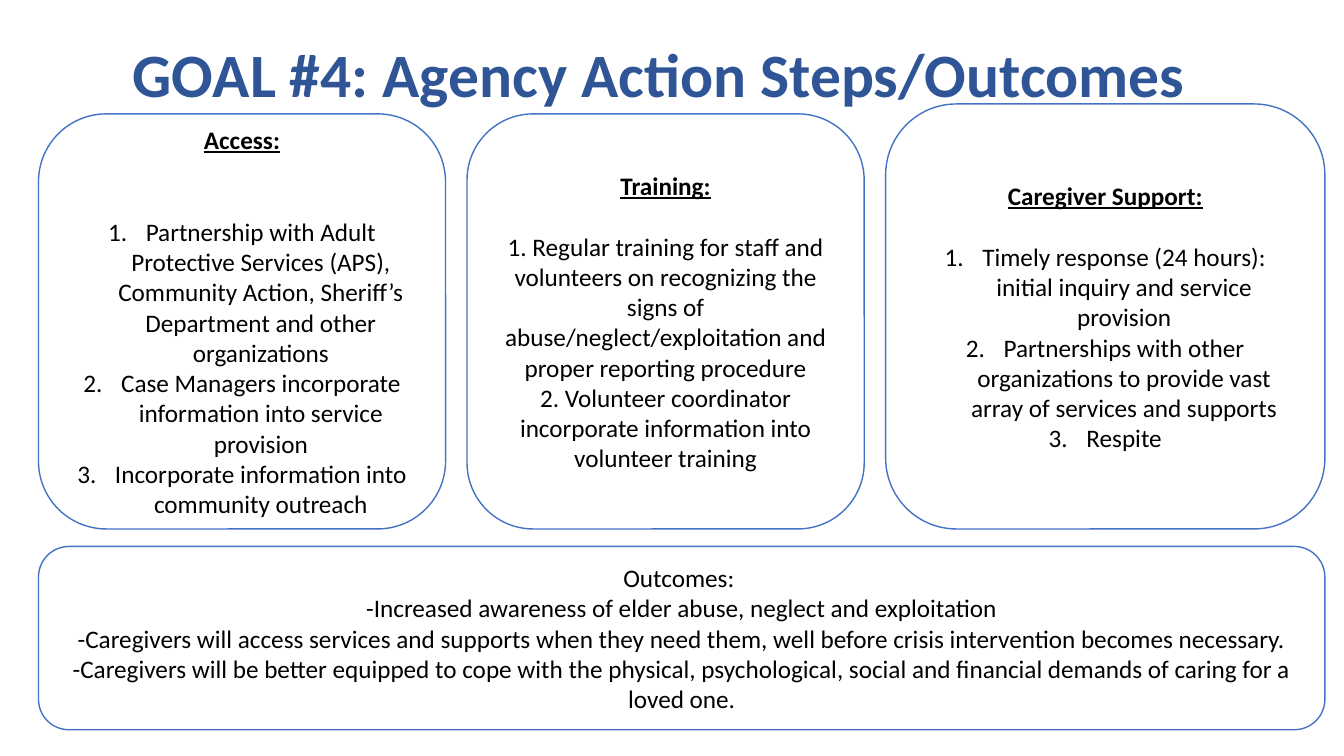
from pptx import Presentation
from pptx.dml.color import RGBColor
from pptx.enum import shapes, text
from pptx.oxml import parse_xml
from pptx.oxml.ns import nsdecls
from pptx.util import Cm, Pt

FONT = "Calibri"
LEFT, GAP = 0.97, 0.54
BASE = 13.33  # lower edge of the three columns
LINE = 22  # height of one text line in points

# heading, gap in lines, top, width, automatic numbers, steps
COLUMNS = [
    ("Access:", 2, 2.87, 10.26, True, [
        "Partnership with Adult Protective Services (APS), Community Action, "
        "Sheriff’s Department and other organizations",
        "Case Managers incorporate information into service provision",
        "Incorporate information into community outreach",
    ]),
    ("Training:", 1, 2.87, 10.01, False, [
        "1. Regular training for staff and volunteers on recognizing the signs of "
        "abuse/neglect/exploitation and proper reporting procedure",
        "2. Volunteer coordinator incorporate information into volunteer training",
    ]),
    ("Caregiver Support:", 1, 2.62, 11.07, True, [
        "Timely response (24 hours): initial inquiry and service provision",
        "Partnerships with other organizations to provide vast array of services "
        "and supports",
        "Respite",
    ]),
]
OUTCOMES = [
    "Outcomes: ",
    "-Increased awareness of elder abuse, neglect and exploitation",
    "-Caregivers will access services and supports when they need them, well before "
    "crisis intervention becomes necessary.",
    "-Caregivers will be better equipped to cope with the physical, psychological, "
    "social and financial demands of caring for a loved one.",
]


def color(code):
    return RGBColor.from_string(code)


def add_run(para, words, size=18, tone="000000", bold=False, under=False):
    run = para.add_run()
    run.text = words
    font = run.font
    font.name, font.size = FONT, Pt(size)
    font.bold, font.underline = bold, under
    font.color.rgb = color(tone)


def number(para):
    props = para._p.get_or_add_pPr()
    props.set("marL", str(Cm(0.95)))
    props.set("indent", str(-Cm(0.95)))
    for tag in ('buFont {} typeface="+mj-lt"', 'buAutoNum {} type="arabicPeriod"'):
        props.append(parse_xml("<a:" + tag.format(nsdecls("a")) + "/>"))


def add_para(frame, first=False):
    para = frame.paragraphs[0] if first else frame.add_paragraph()
    para.alignment = text.PP_ALIGN.CENTER
    return para


def add_panel(slide, box):
    """Rounded white panel; returns its text frame."""
    panel = slide.shapes.add_shape(
        shapes.MSO_SHAPE.ROUNDED_RECTANGLE, *map(Cm, box))
    panel.shadow.inherit = False
    panel.fill.solid()
    panel.fill.fore_color.rgb = color("FFFFFF")
    panel.line.color.rgb = color("4472C4")
    panel.line.width = Pt(1)
    frame = panel.text_frame
    frame.word_wrap = True
    frame.vertical_anchor = text.MSO_ANCHOR.MIDDLE
    return frame


def add_title(slide, box, words):
    title = slide.shapes.title
    title.left, title.top, title.width, title.height = map(Cm, box)
    frame = title.text_frame
    frame.vertical_anchor = text.MSO_ANCHOR.MIDDLE
    para = add_para(frame, True)
    para.line_spacing = 0.9
    add_run(para, words, 44, "2F5597", bold=True)


def add_column(slide, box, head, gap, auto, steps):
    frame = add_panel(slide, box)
    para = add_para(frame, True)
    para.space_after = Pt(gap * LINE)
    add_run(para, head, bold=True, under=True)
    for step in steps:
        para = add_para(frame)
        if auto:
            number(para)
        add_run(para, step)


def add_outcomes(slide, box, lines):
    frame = add_panel(slide, box)
    for i, line in enumerate(lines):
        add_run(add_para(frame, i == 0), line)


def main():
    deck = Presentation()
    deck.slide_width, deck.slide_height = Cm(33.87), Cm(19.05)
    slide = deck.slides.add_slide(deck.slide_layouts[5])

    # Title
    add_title(slide, (LEFT, 0, 31.29, 3.89), "GOAL #4: Agency Action Steps/Outcomes")

    # Action steps, side by side
    left = LEFT
    for head, gap, top, width, auto, steps in COLUMNS:
        add_column(slide, (left, top, width, BASE - top), head, gap, auto, steps)
        left += width + GAP

    # Outcomes across the full width
    add_outcomes(slide, (LEFT, 13.77, left - GAP - LEFT, 4.62), OUTCOMES)
    deck.save("out.pptx")


if __name__ == "__main__":
    main()
